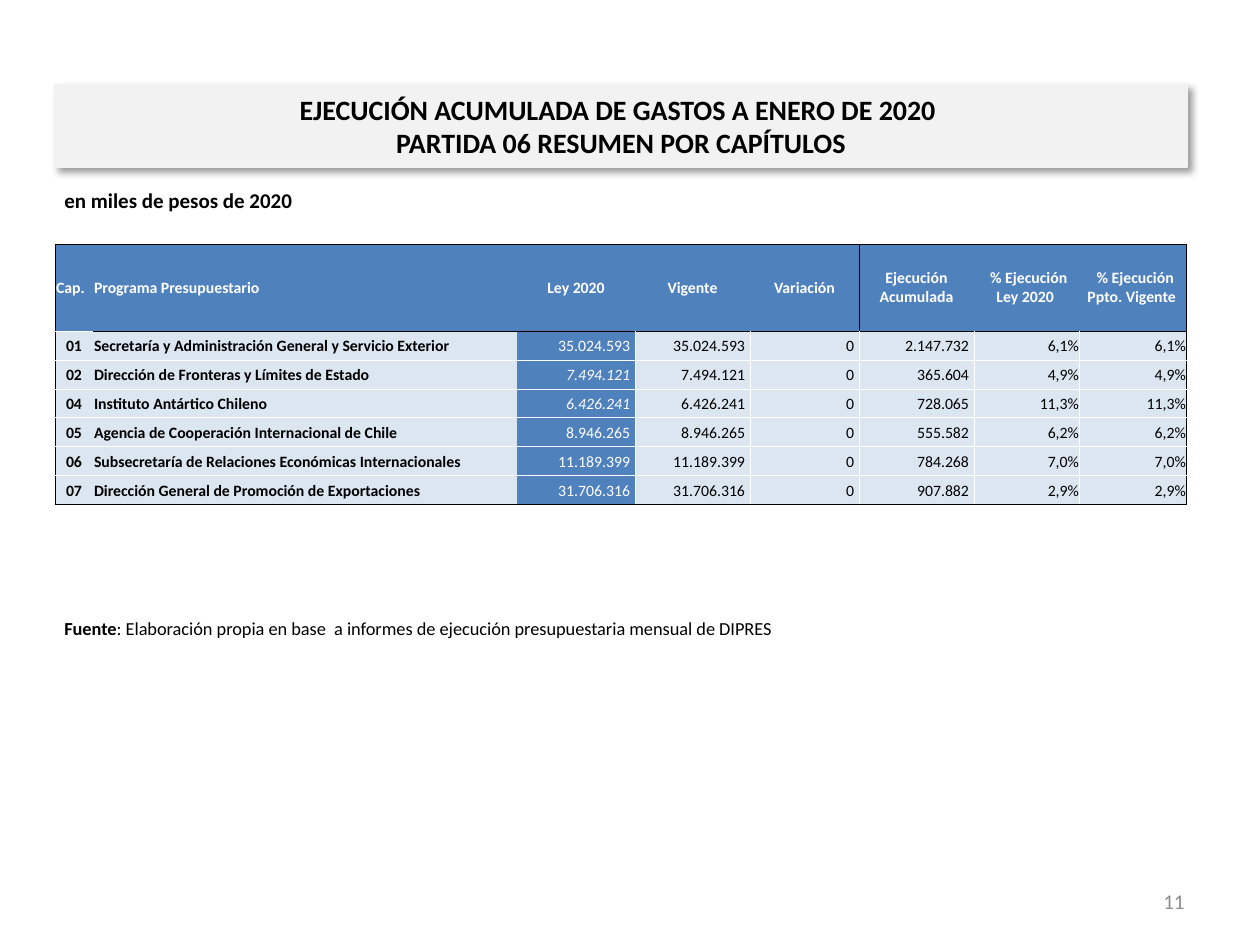
from lxml import etree
from pptx import Presentation, util as u
from pptx.dml.color import RGBColor
from pptx.enum import shapes, text
from pptx.oxml.ns import qn

# Content
TITLE = "EJECUCIÓN ACUMULADA DE GASTOS A ENERO DE 2020 \nPARTIDA 06 RESUMEN POR CAPÍTULOS"
UNITS = "en miles de pesos de 2020"
SOURCE = ("Fuente", ": Elaboración propia en base  a informes de ejecución presupuestaria mensual de DIPRES")
PAGE = "11"
HEADER = ["Cap.", "Programa Presupuestario", "Ley 2020", "Vigente", "Variación",
          "Ejecución Acumulada", " % Ejecución Ley 2020 ", " % Ejecución Ppto. Vigente "]
ROWS = [
    ("01", "Secretaría y Administración General y Servicio Exterior",
     "35.024.593", "35.024.593", "0", "2.147.732", "6,1%", "6,1%"),
    ("02", "Dirección de Fronteras y Límites de Estado",
     "7.494.121", "7.494.121", "0", "365.604", "4,9%", "4,9%"),
    ("04", "Instituto Antártico Chileno",
     "6.426.241", "6.426.241", "0", "728.065", "11,3%", "11,3%"),
    ("05", "Agencia de Cooperación Internacional de Chile",
     "8.946.265", "8.946.265", "0", "555.582", "6,2%", "6,2%"),
    ("06", "Subsecretaría de Relaciones Económicas Internacionales",
     "11.189.399", "11.189.399", "0", "784.268", "7,0%", "7,0%"),
    ("07", "Dirección General de Promoción de Exportaciones",
     "31.706.316", "31.706.316", "0", "907.882", "2,9%", "2,9%"),
]
ITALIC_LAW = {"02", "04"}

# Layout and colours
COLS = [38, 424, 118, 115, 109, 115, 106, 107]
HEAD_H, ROW_H = 87, 29
LEFT, WIDTH, TABLE_TOP = 55, sum(COLS), 244
BLACK, WHITE, BLUE, PALE, GREY = "000000", "FFFFFF", "4F81BD", "DCE6F1", "F2F2F2"
L, C, R = text.PP_ALIGN.LEFT, text.PP_ALIGN.CENTER, text.PP_ALIGN.RIGHT


def px(n):
    return u.Emu(round(n * 914400 / 126))


def rgb(color):
    return RGBColor.from_string(color)


def write(tf, content, size=9, color=BLACK, bold=False, italic=False, align=L):
    """Add text to the first paragraph; a newline becomes a line break."""
    p = tf.paragraphs[0]
    p.alignment = align
    for i, line in enumerate(content.split("\n")):
        if i:
            p.add_line_break()
        r = p.add_run()
        r.text = line
        r.font.name, r.font.size = "Calibri", u.Pt(size)
        r.font.bold, r.font.italic = bold, italic
        r.font.color.rgb = rgb(color)


def textbox(s, x, y, w, h, anchor=text.MSO_ANCHOR.TOP):
    tf = s.shapes.add_textbox(px(x), px(y), px(w), px(h)).text_frame
    tf.word_wrap, tf.vertical_anchor = True, anchor
    return tf


def borders(cell, **sides):
    """Draw each side in its colour, or no line for None; the fill must follow."""
    pr = cell._tc.get_or_add_tcPr()
    for i, side in enumerate(("L", "R", "T", "B")):
        ln = etree.Element(qn("a:ln" + side), w=str(u.Pt(0.5)))
        if sides[side]:
            fill = etree.SubElement(ln, qn("a:solidFill"))
            etree.SubElement(fill, qn("a:srgbClr"), val=sides[side])
        else:
            etree.SubElement(ln, qn("a:noFill"))
        pr.insert(i, ln)


def vertical(row, edge):
    """Colour of the vertical line at a column edge."""
    if edge in (0, len(COLS)) or (row == 0 and edge == 5):
        return BLACK
    return WHITE if row and edge > 2 else None


def horizontal(edge, col):
    """Colour of the horizontal line at a row edge."""
    return BLACK if edge in (0, len(ROWS) + 1) or (edge == 1 and col) else WHITE


def cell_style(row, col, cap):
    if row == 0:
        return dict(color=WHITE, bold=True, align=C if col > 1 else L)
    if col < 2:
        return dict(bold=True, align=L if col else C)
    if col == 2:
        return dict(color=WHITE, italic=cap in ITALIC_LAW, align=R)
    return dict(align=R)


def budget_table(s):
    data = [HEADER, *ROWS]
    table = s.shapes.add_table(len(data), len(COLS), px(LEFT), px(TABLE_TOP), px(WIDTH),
                               px(HEAD_H + ROW_H * len(ROWS))).table
    table.first_row = table.horz_banding = False
    for column, w in zip(table.columns, COLS):
        column.width = px(w)
    for i, values in enumerate(data):
        table.rows[i].height = px(ROW_H if i else HEAD_H)
        for j, value in enumerate(values):
            cell = table.cell(i, j)
            cell.margin_left = cell.margin_top = px(1)
            cell.margin_right = px(5 if i and 2 <= j <= 5 else 1)
            cell.margin_bottom = 0
            cell.vertical_anchor = text.MSO_ANCHOR.MIDDLE
            cell.fill.solid()
            cell.fill.fore_color.rgb = rgb(BLUE if i == 0 or j == 2 else PALE)
            borders(cell, L=vertical(i, j), R=vertical(i, j + 1),
                    T=horizontal(i, j), B=horizontal(i + 1, j))
            write(cell.text_frame, value, **cell_style(i, j, values[0]))


def title_band(s):
    sp = s.shapes.add_shape(shapes.MSO_SHAPE.RECTANGLE, px(LEFT), px(85), px(WIDTH), px(82))
    sp.shadow.inherit = False
    sp.fill.solid()
    sp.fill.fore_color.rgb = sp.line.color.rgb = rgb(GREY)
    sp.line.width = u.Pt(0.75)
    # Soft shadow to the lower right
    effects = sp._element.spPr.find(qn("a:effectLst"))
    shadow = etree.SubElement(effects, qn("a:outerShdw"), blurRad=str(u.Pt(4)), dist=str(u.Pt(3)),
                              dir=str(45 * 60000), algn="tl", rotWithShape="0")
    color = etree.SubElement(shadow, qn("a:srgbClr"), val=BLACK)
    etree.SubElement(color, qn("a:alpha"), val="40000")
    tf = sp.text_frame
    tf.word_wrap, tf.vertical_anchor = True, text.MSO_ANCHOR.MIDDLE
    tf.margin_left = tf.margin_right = px(14)
    write(tf, TITLE, size=16, bold=True, align=C)


def main():
    prs = Presentation()
    prs.slide_width, prs.slide_height = px(1260), px(945)
    s = prs.slides.add_slide(prs.slide_layouts[6])

    # Page number
    write(textbox(s, 903, 876, 294, 50, text.MSO_ANCHOR.MIDDLE), PAGE, size=12, color="8C8C8C", align=R)

    # Source line
    source = textbox(s, 52, 611, 1158, 50)
    for content, bold in zip(SOURCE, (True, False)):
        write(source, content, size=10.5, bold=bold)

    # Heading and table
    write(textbox(s, 52, 181, 1134, 50), UNITS, size=12, bold=True)
    title_band(s)
    budget_table(s)
    prs.save("out.pptx")


if __name__ == "__main__":
    main()
